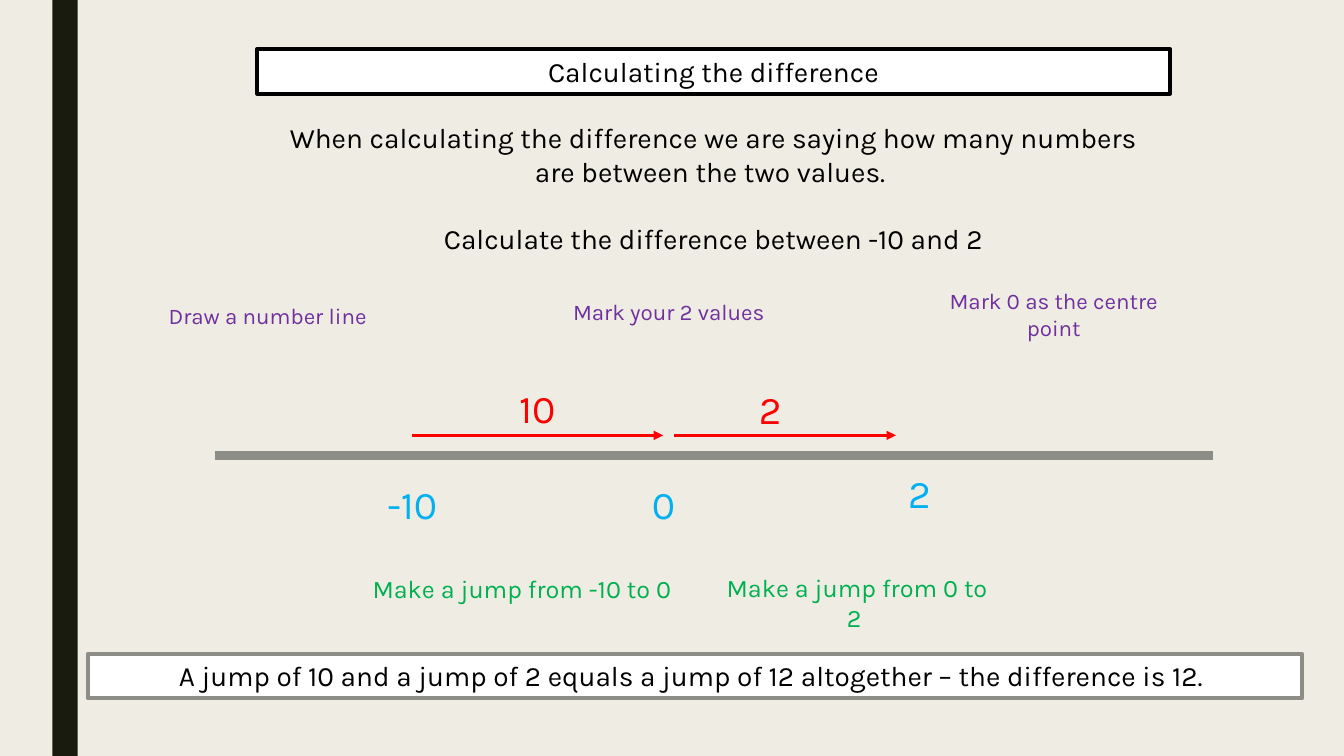
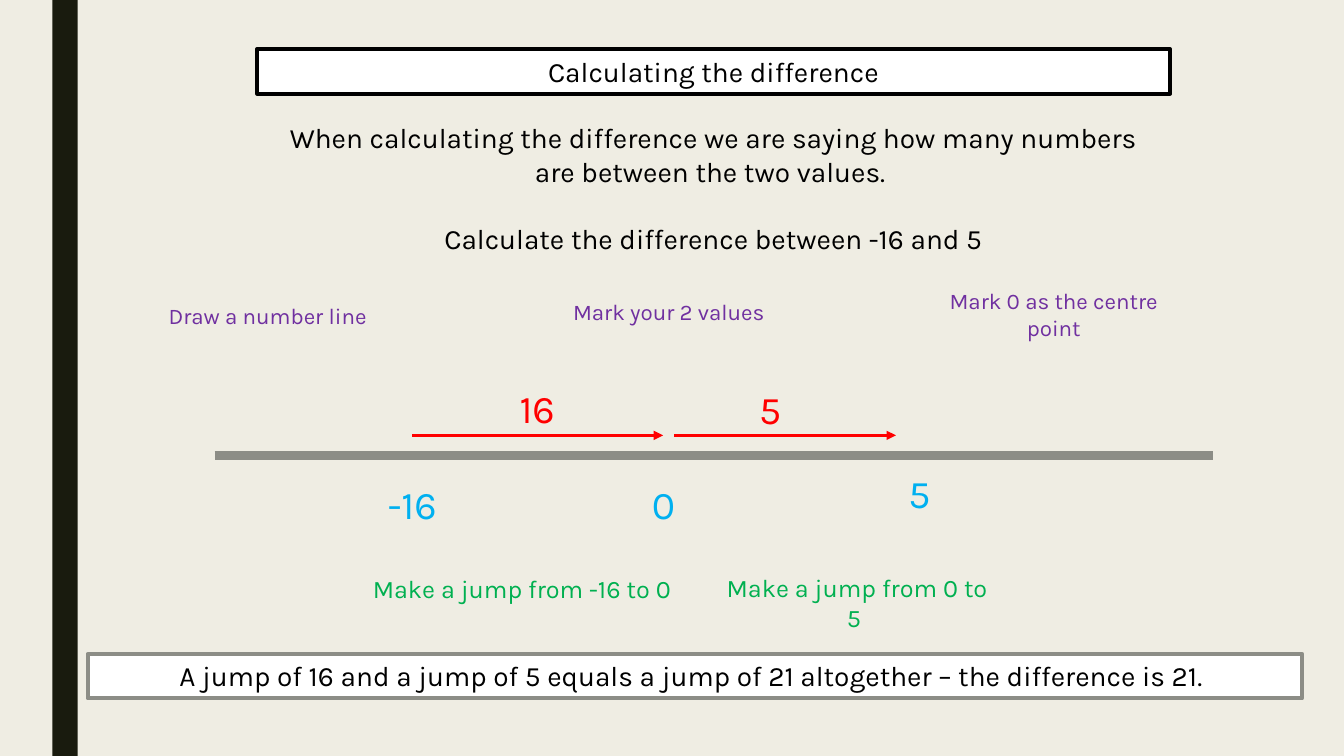
from lxml.etree import SubElement
from pptx import Presentation
from pptx.dml.color import RGBColor
from pptx.enum.dml import MSO_LINE
from pptx.enum.shapes import MSO_CONNECTOR, MSO_SHAPE
from pptx.enum.text import MSO_ANCHOR, MSO_AUTO_SIZE, PP_ALIGN
from pptx.oxml.ns import qn
from pptx.util import Cm, Pt

COLOURS = {
    "paper": "EFEDE3",
    "band": "191B0E",
    "white": "FFFFFF",
    "ink": "000000",
    "grey": "8C8D86",
    "step": "7030A0",
    "value": "00B0F0",
    "jump": "FF0000",
    "caption": "00B050",
}
FONT = "Karla"
TITLE = "Calculating the difference"
INTRO = ("When calculating the difference we are saying how many numbers "
         "are between the two values. ")
STEPS = [
    ("Draw a number line", 3.81, 7.49, 0.94),
    ("Mark your 2 values", 13.92, 7.39, 0.94),
    ("Mark 0 as the centre point", 23.62, 7.11, 1.63),
]
QUESTIONS = [(-10, 2), (-16, 5)]

SLIDE_WIDTH, SLIDE_HEIGHT = 33.87, 19.05
COLUMN_LEFT, COLUMN_WIDTH = 6.48, 23.01
ROW_HEIGHT = 1.12
STEP_WIDTH = 5.87
NUMBER_WIDTH, NUMBER_HEIGHT = 2.24, 1.45
LINE_Y, JUMP_Y = 11.48, 10.97


def colour(name):
    return RGBColor.from_string(COLOURS[name])


def add_words(slide, words, left, top, width, height, size, ink="ink", border=None):
    box = slide.shapes.add_textbox(Cm(left), Cm(top), Cm(width), Cm(height))
    if border:
        box.fill.solid()
        box.fill.fore_color.rgb = colour("white")
        box.line.color.rgb = colour(border)
        box.line.width = Pt(2.75)
    frame = box.text_frame
    frame.word_wrap = True
    frame.auto_size = MSO_AUTO_SIZE.SHAPE_TO_FIT_TEXT
    frame.vertical_anchor = MSO_ANCHOR.TOP
    paragraph = frame.paragraphs[0]
    paragraph.alignment = PP_ALIGN.CENTER
    run = paragraph.add_run()
    run.text = words
    run.font.name = FONT
    run.font.size = Pt(size)
    run.font.color.rgb = colour(ink)


def add_number(slide, number, left, top, ink):
    add_words(slide, str(number), left, top, NUMBER_WIDTH, NUMBER_HEIGHT, 28, ink)


def add_rule(slide, start, end, y, ink, weight, arrow=False):
    rule = slide.shapes.add_connector(
        MSO_CONNECTOR.STRAIGHT, Cm(start), Cm(y), Cm(end), Cm(y))
    rule.line.color.rgb = colour(ink)
    rule.line.width = Pt(weight)
    rule.line.dash_style = MSO_LINE.SOLID
    if arrow:
        SubElement(rule.line._get_or_add_ln(), qn("a:tailEnd"), type="triangle")
    SubElement(rule.element.spPr, qn("a:effectLst"))


def style_master(master, slide):
    master.background.fill.solid()
    master.background.fill.fore_color.rgb = colour("paper")
    band = slide.shapes.add_shape(
        MSO_SHAPE.RECTANGLE, Cm(1.32), Cm(0), Cm(0.64), Cm(SLIDE_HEIGHT))
    band.shadow.inherit = False
    band.fill.solid()
    band.fill.fore_color.rgb = colour("band")
    band.line.fill.background()
    master.element.cSld.spTree.insert(2, band.element)


def fill_slide(slide, low, high):
    total = high - low
    add_words(slide, TITLE, COLUMN_LEFT, 1.24, COLUMN_WIDTH, ROW_HEIGHT, 20, border="ink")
    add_words(slide, INTRO, COLUMN_LEFT, 2.92, COLUMN_WIDTH, 1.96, 20)
    add_words(slide, f"Calculate the difference between {low} and {high}",
              COLUMN_LEFT, 5.46, COLUMN_WIDTH, ROW_HEIGHT, 20)

    for step, left, top, height in STEPS:
        add_words(slide, step, left, top, STEP_WIDTH, height, 16, "step")

    add_rule(slide, 5.41, 30.56, LINE_Y, "grey", 6)
    for value, left, top in [(low, 9.27, 11.99), (0, 15.6, 11.99), (high, 22.05, 11.71)]:
        add_number(slide, value, left, top, "value")

    jumps = [
        (low, 0, (10.39, 16.71), (12.42, 9.55), (8.99, 14.33, 8.33), ""),
        (0, high, (16.99, 22.58), (18.29, 9.58), (17.83, 14.3, 7.54), " "),
    ]
    for start, end, arrow, number_at, caption_at, ending in jumps:
        add_rule(slide, *arrow, JUMP_Y, "jump", 2.25, arrow=True)
        add_number(slide, end - start, *number_at, "jump")
        add_words(slide, f"Make a jump from {start} to {end}{ending}",
                  *caption_at, 1.02, 18, "caption")

    add_words(slide, f"A jump of {-low} and a jump of {high} equals a jump of {total} "
                     f"altogether – the difference is {total}. ",
              2.21, 16.48, 30.61, ROW_HEIGHT, 20, border="grey")


def main():
    deck = Presentation()
    deck.slide_width, deck.slide_height = Cm(SLIDE_WIDTH), Cm(SLIDE_HEIGHT)
    blank = deck.slide_layouts[6]
    slides = [deck.slides.add_slide(blank) for _ in QUESTIONS]
    style_master(deck.slide_master, slides[0])
    for slide, (low, high) in zip(slides, QUESTIONS):
        fill_slide(slide, low, high)
    deck.save("out.pptx")


if __name__ == "__main__":
    main()
